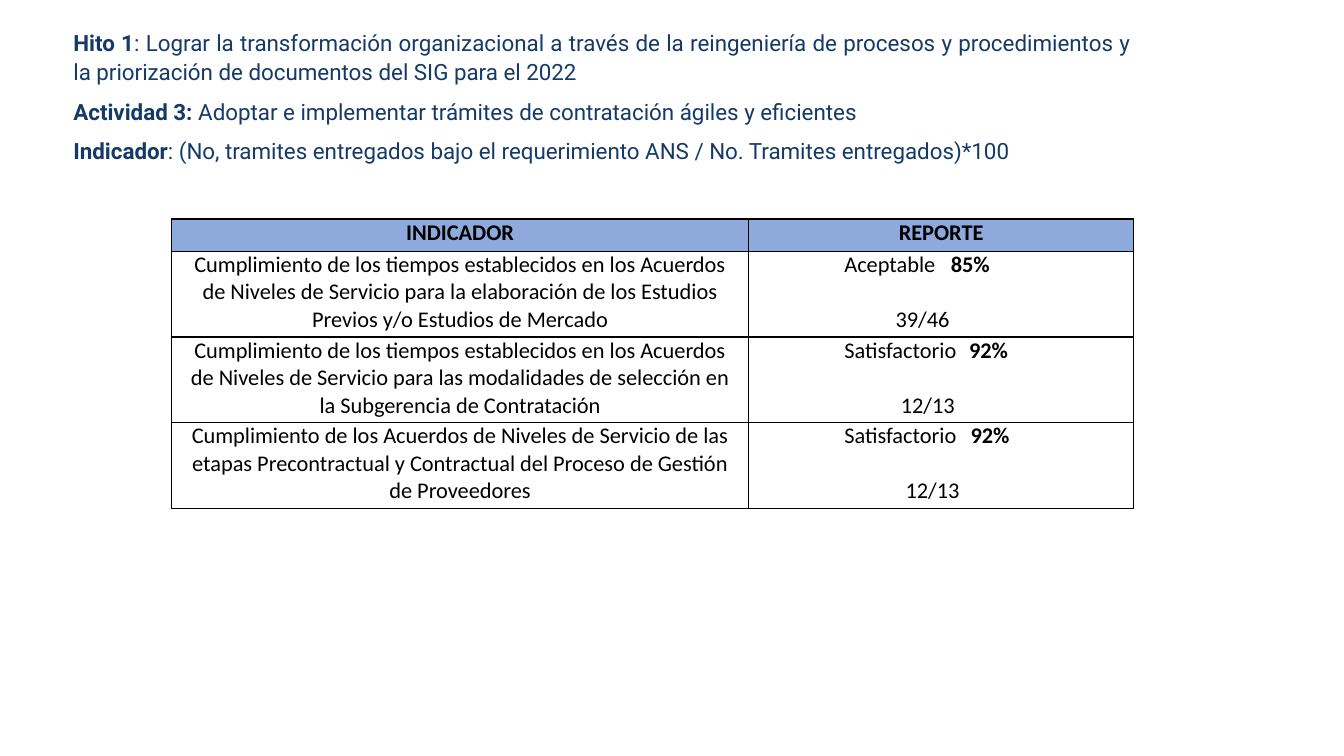
import pptx
import pptx.util
import pptx.dml.color
import pptx.enum.text
import pptx.oxml.ns
import lxml.etree

Cm = pptx.util.Cm
Pt = pptx.util.Pt
Align = pptx.enum.text.PP_ALIGN
NAVY = pptx.dml.color.RGBColor(0x16, 0x3A, 0x68)
BLACK = pptx.dml.color.RGBColor(0, 0, 0)
BLUE = pptx.dml.color.RGBColor(0x8E, 0xA9, 0xDB)

GOALS = [
    ("Hito 1", ": Lograr la transformación organizacional a través de la reingeniería de procesos "
               "y procedimientos y la priorización de documentos del SIG para el 2022"),
    ("Actividad 3: ", "Adoptar e implementar trámites de contratación ágiles y eficientes"),
    ("Indicador", ": (No, tramites entregados bajo el requerimiento ANS / No. Tramites entregados)*100"),
]
HEADS = ["INDICADOR", "REPORTE"]
ROWS = [
    ("Cumplimiento de los tiempos establecidos en los Acuerdos de Niveles de Servicio para la "
     "elaboración de los Estudios Previos y/o Estudios de Mercado",
     "Aceptable", "85%", "39/46", 2.68, 1.29),
    ("Cumplimiento de los tiempos establecidos en los Acuerdos de Niveles de Servicio para las "
     "modalidades de selección en la Subgerencia de Contratación",
     "Satisfactorio", "92%", "12/13", 3.14, 1.42),
    ("Cumplimiento de los Acuerdos de Niveles de Servicio de las etapas Precontractual y "
     "Contractual del Proceso de Gestión de Proveedores",
     "Satisfactorio", "92%", "12/13", 3.18, 1.54),
]


def write(para, text, font="Calibri", size=16, color=BLACK, bold=False):
    run = para.add_run()
    run.text = text
    run.font.name = font
    run.font.size = Pt(size)
    run.font.color.rgb = color
    run.font.bold = bold


def child(node, tag, **attrs):
    return lxml.etree.SubElement(node, pptx.oxml.ns.qn(tag), **attrs)


class Page:
    def __init__(self, deck):
        self.slide = deck.slides.add_slide(deck.slide_layouts[6])
        self.edge = Pt(1)
        self.pad = Cm(0.3)

    def intro(self, goals, left, top, width, height):
        frame = self.slide.shapes.add_textbox(left, top, width, height).text_frame
        frame.word_wrap = True
        frame.margin_right = Cm(2.77)
        for i, (label, text) in enumerate(goals):
            para = frame.paragraphs[0] if i == 0 else frame.add_paragraph()
            para.alignment = Align.JUSTIFY
            para.line_spacing = 1.07
            para.space_after = Pt(8)
            write(para, label, font="Roboto", color=NAVY, bold=True)
            write(para, text, font="Roboto", color=NAVY)

    def cell(self, cell, left, right, fill=None):
        cell.margin_left, cell.margin_right = left, right
        cell.margin_top = cell.margin_bottom = 0
        props = cell._tc.get_or_add_tcPr()
        for side in ("a:lnL", "a:lnR", "a:lnT", "a:lnB"):
            line = child(props, side, w=str(self.edge))
            child(child(line, "a:solidFill"), "a:srgbClr", val=str(BLACK))
        if fill is None:
            cell.fill.background()
        else:
            cell.fill.solid()
            cell.fill.fore_color.rgb = fill
        return cell.text_frame

    def center(self, cell, text, bold=False, fill=None):
        para = self.cell(cell, self.pad, self.pad, fill).paragraphs[0]
        para.alignment = Align.CENTER
        write(para, text, bold=bold)

    def report(self, cell, grade, share, ratio, tab, indent):
        frame = self.cell(cell, Cm(2.41), 0)
        para = frame.paragraphs[0]
        tabs = child(para._p.get_or_add_pPr(), "a:tabLst")
        child(tabs, "a:tab", pos=str(Cm(tab)), algn="l")
        write(para, grade + "\t")
        write(para, share, bold=True)
        para = frame.add_paragraph()
        para._p.get_or_add_pPr().set("marL", str(Cm(indent)))
        para.space_before = Pt(19.7)
        write(para, ratio)

    def table(self, heads, rows, left, top, widths, heights):
        grid = self.slide.shapes.add_table(
            len(heights), len(widths), left, top, sum(widths), sum(heights)).table
        grid.first_row = grid.horz_banding = False
        for col, width in zip(grid.columns, widths):
            col.width = width
        for row, height in zip(grid.rows, heights):
            row.height = height
        for j, head in enumerate(heads):
            self.center(grid.cell(0, j), head, bold=True, fill=BLUE)
        for i, (goal, *result) in enumerate(rows, 1):
            self.center(grid.cell(i, 0), goal)
            self.report(grid.cell(i, 1), *result)


def main():
    deck = pptx.Presentation()
    deck.slide_width, deck.slide_height = Cm(33.87), Cm(19.05)
    page = Page(deck)
    page.intro(GOALS, Cm(1.6), Cm(0.56), Cm(29.67), Cm(6.07))
    page.table(HEADS, ROWS, Cm(4.32), Cm(5.52), [Cm(14.55), Cm(9.7)],
               [Cm(0.81)] + [Cm(2.16)] * len(ROWS))
    deck.save("out.pptx")


if __name__ == "__main__":
    main()
